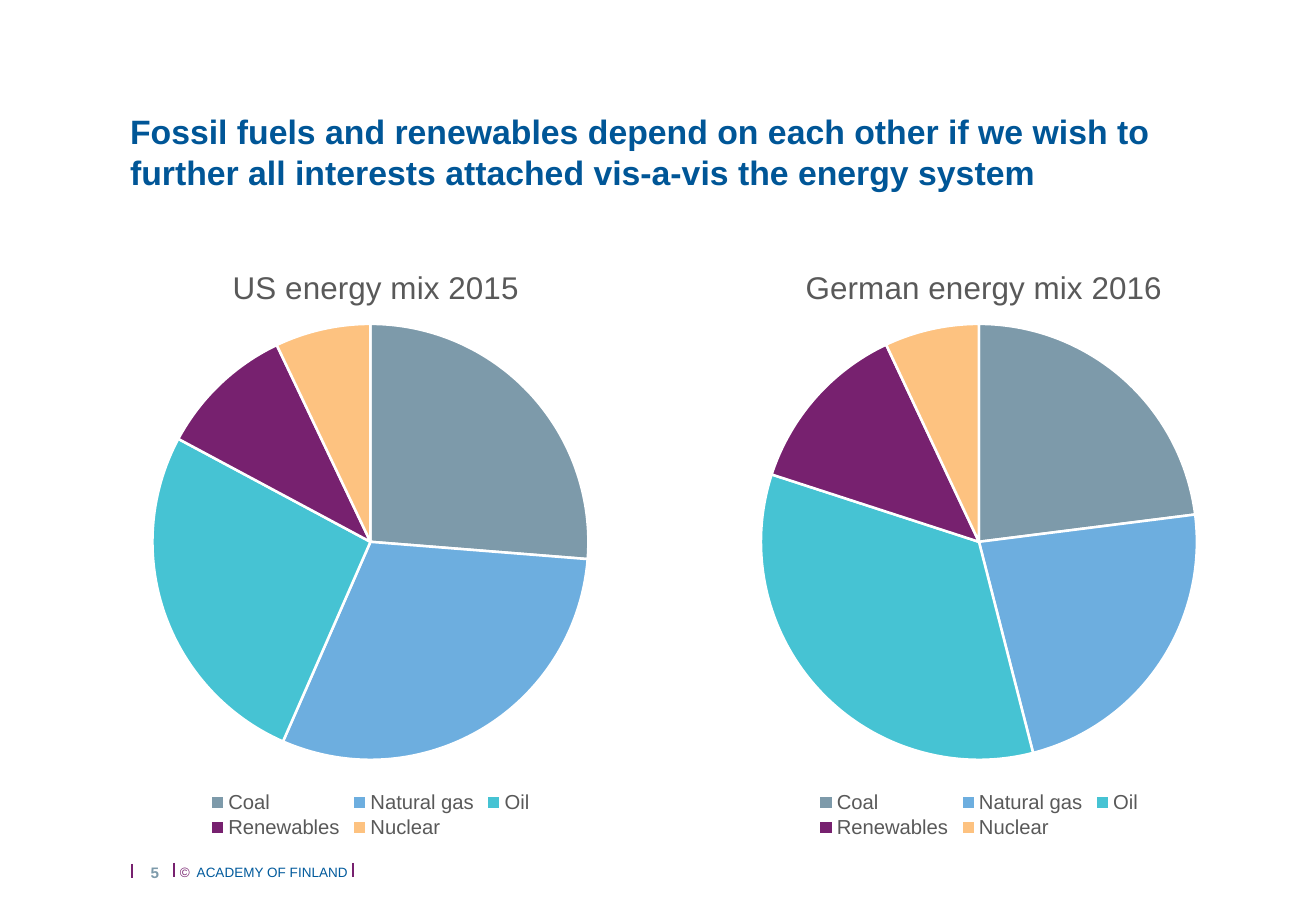
import pptx
import pptx.chart.data
import pptx.dml.color
import pptx.enum.chart
import pptx.enum.shapes
import pptx.enum.text
import pptx.oxml
import pptx.oxml.ns
import pptx.util

FONT = "Arial"
BLUE, FOOTER_BLUE, PURPLE, SLATE, GREY = "005697", "005A9C", "77216F", "7D9AAA", "595959"
FUELS = {"Coal": SLATE, "Natural gas": "6DAEDF", "Oil": "46C3D3",
         "Renewables": PURPLE, "Nuclear": "FDC280"}
CHART_TOP, CHART_H = 233, 610
PIE_TOP, PIE_SIZE = 91, 436
LEGEND_TOP, LEGEND_W, LEGEND_H = 555, 332, 54
TITLE_TOP = 28


def px(n):
    return pptx.util.Emu(round(n * 914400 / 121.5))


def rgb(value):
    return pptx.dml.color.RGBColor.from_string(value)


def set_font(font, size, color, bold=False):
    values = {"name": FONT, "size": pptx.util.Pt(size), "bold": bold}
    for name, value in values.items():
        setattr(font, name, value)
    font.color.rgb = rgb(color)


def manual_layout(w, h, inner=False):
    """Return a function turning a px box inside a chart into a c:layout element."""
    def make(**box):
        modes = [("layoutTarget", "inner")] if inner else []
        modes += [(k + "Mode", "edge") for k in "xy"]
        sizes = [(k, round(v / (w if k in "xw" else h), 4)) for k, v in box.items()]
        parts = "".join(f'<c:{k} val="{v}"/>' for k, v in modes + sizes)
        return pptx.oxml.parse_xml(
            f'<c:layout {pptx.oxml.ns.nsdecls("c")}>'
            f"<c:manualLayout>{parts}</c:manualLayout></c:layout>")
    return make


def replace_layout(parent, layout, index):
    for old in parent.findall(pptx.oxml.ns.qn("c:layout")):
        parent.remove(old)
    parent.insert(index, layout)


class Deck:
    def __init__(self, width, height):
        self.prs = pptx.Presentation()
        self.prs.slide_width, self.prs.slide_height = px(width), px(height)
        self.s = self.prs.slides.add_slide(self.prs.slide_layouts[5])

    def frame(self, tf, runs, size, align, anchor, insets, bold=False):
        """Fill a text frame with one paragraph of (text, colour) runs."""
        names = ("margin_left", "margin_top", "margin_right", "margin_bottom")
        values = dict(zip(names, map(px, insets)), word_wrap=True, vertical_anchor=anchor,
                      auto_size=pptx.enum.text.MSO_AUTO_SIZE.NONE)
        for name, value in values.items():
            setattr(tf, name, value)
        p = tf.paragraphs[0]
        p.alignment = align
        for text, color in runs:
            r = p.add_run()
            r.text = text
            set_font(r.font, size, color, bold)

    def title(self, text, x, y, w, h):
        sp = self.s.shapes.title
        for name, n in dict(left=x, top=y, width=w, height=h).items():
            setattr(sp, name, px(n))
        self.frame(sp.text_frame, [(text, BLUE)], 20, pptx.enum.text.PP_ALIGN.LEFT,
                   pptx.enum.text.MSO_ANCHOR.MIDDLE, (12, 6, 12, 6), True)

    def text(self, runs, x, y, w, h, size, anchor, insets, bold=False):
        sp = self.s.shapes.add_textbox(px(x), px(y), px(w), px(h))
        self.frame(sp.text_frame, runs, size, pptx.enum.text.PP_ALIGN.CENTER,
                   anchor, insets, bold)

    def divider(self, x, y, h):
        line = self.s.shapes.add_connector(
            pptx.enum.shapes.MSO_CONNECTOR.STRAIGHT, px(x), px(y), px(x), px(y + h))
        line.line.color.rgb = rgb(PURPLE)
        line.line.width = pptx.util.Pt(0.75)
        line._element.spPr.append(
            pptx.oxml.parse_xml(f'<a:effectLst {pptx.oxml.ns.nsdecls("a")}/>'))

    def pie(self, name, values, x, w, title_x):
        data = pptx.chart.data.CategoryChartData()
        data.categories = list(FUELS)
        data.add_series(name, values)
        chart = self.s.shapes.add_chart(
            pptx.enum.chart.XL_CHART_TYPE.PIE, px(x), px(CHART_TOP), px(w), px(CHART_H),
            data).chart
        set_font(chart.font, 10, "000000")
        chart.has_title = chart.has_legend = True

        p = chart.chart_title.text_frame.paragraphs[0]
        r = p.add_run()
        r.text = name
        set_font(r.font, 18.6, GREY)
        chart.chart_title.include_in_layout = False

        chart.legend.position = pptx.enum.chart.XL_LEGEND_POSITION.BOTTOM
        chart.legend.include_in_layout = False
        set_font(chart.legend.font, 12, GREY)

        plot = chart.plots[0]
        plot.vary_by_categories = True
        for i, color in enumerate(FUELS.values()):
            fmt = plot.series[0].points[i].format
            fmt.fill.solid()
            fmt.fill.fore_color.rgb = rgb(color)
            fmt.line.color.rgb = rgb("FFFFFF")
            fmt.line.width = pptx.util.Pt(1.5)

        box = manual_layout(w, CHART_H)
        replace_layout(chart.chart_title._element, box(x=title_x, y=TITLE_TOP), 1)
        replace_layout(chart.legend._element, box(
            x=(w - LEGEND_W) / 2, y=LEGEND_TOP, w=LEGEND_W, h=LEGEND_H), 1)
        replace_layout(chart._chartSpace.chart.plotArea, manual_layout(w, CHART_H, True)(
            x=(w - PIE_SIZE) / 2, y=PIE_TOP, w=PIE_SIZE, h=PIE_SIZE), 0)


def main():
    deck = Deck(1316, 911)
    anchors = pptx.enum.text.MSO_ANCHOR
    deck.text([("©", PURPLE), ("  ACADEMY OF FINLAND", FOOTER_BLUE)],
              122, 858, 284, 29, 8, anchors.TOP, (12, 6, 12, 6))
    for x, y in ((132, 864), (174, 863), (353, 863)):
        deck.divider(x, y, 14)
    deck.text([("5", SLATE)], 115, 863, 80, 21, 9, anchors.BOTTOM, (12, 0, 12, 2), True)
    deck.title("Fossil fuels and renewables depend on each other if we wish to further "
               "all interests attached vis-a-vis the energy system", 118, 103, 1130, 97)
    deck.pie("US energy mix 2015", (26, 30, 26, 10, 7), 74, 593, 153)
    deck.pie("German energy mix 2016", (23, 23, 34, 13, 7), 724, 510, 76)
    deck.prs.save("out.pptx")


if __name__ == "__main__":
    main()
